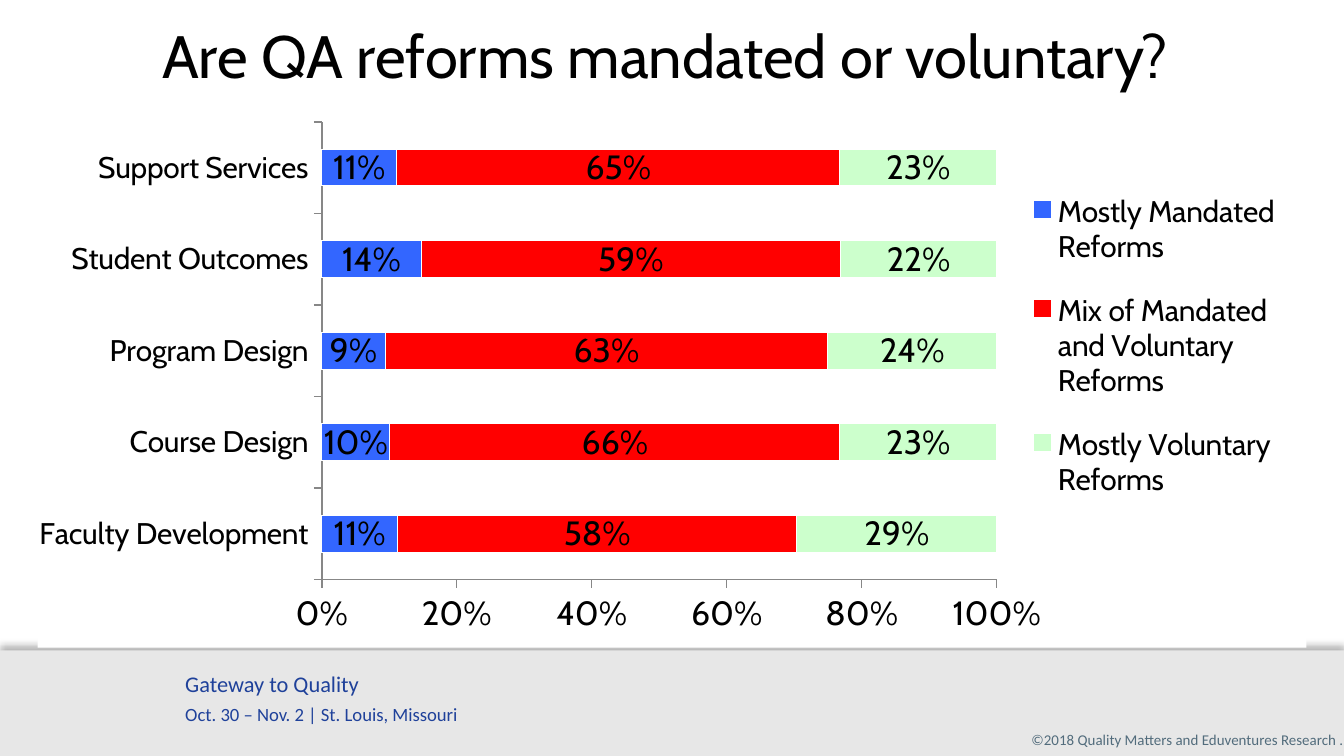
import pptx
import pptx.util
import pptx.chart.data
import pptx.dml.color
import pptx.enum.chart
import pptx.enum.shapes
import pptx.enum.text
import pptx.oxml
import pptx.oxml.ns

# Content
TITLE = "Are QA reforms mandated or voluntary?"
EVENT = [("Gateway to Quality", 12), ("Oct. 30 – Nov. 2 | St. Louis, Missouri", 10)]
COPYRIGHT = [("©2018 Quality Matters and Eduventures Research .", 8)]
AREAS = ["Faculty Development", "Course Design", "Program Design",
         "Student Outcomes", "Support Services"]
REFORMS = [
    ("Mostly Mandated Reforms", "3366FF", [0.11, 0.10, 0.09, 0.14, 0.11]),
    ("Mix of Mandated and Voluntary Reforms", "FF0000", [0.58, 0.66, 0.63, 0.59, 0.65]),
    ("Mostly Voluntary Reforms", "CCFFCC", [0.29, 0.23, 0.24, 0.22, 0.23]),
]
WIDTH = 10
HEIGHT = WIDTH * 9 / 16
FOOTER_TOP = 4.84
PLOT_SHARES = (0.224, 0.041, 0.532, 0.835)
LEGEND_SHARES = (0.77, 0.12, 0.22, 0.66)
ALIGN = pptx.enum.text.PP_ALIGN
NAMESPACES = pptx.oxml.ns.nsdecls("a", "c")


def color(value):
    return pptx.dml.color.RGBColor.from_string(value)


def inches(*lengths):
    return [pptx.util.Inches(length) for length in lengths]


def set_font(font, name, size, value):
    font.name = name
    font.size = pptx.util.Pt(size)
    font.color.rgb = color(value)


def add_text(page, area, lines, value, align, space=0):
    box = page.shapes.add_textbox(*inches(*area))
    frame = box.text_frame
    frame.word_wrap = True
    for index, (words, size) in enumerate(lines):
        para = frame.add_paragraph() if index else frame.paragraphs[0]
        para.text = words
        para.alignment = align
        para.space_before = pptx.util.Pt(space if index else 0)
        set_font(para.font, "Calibri", size, value)
    return frame


def manual_layout(shares, inner=False):
    target = '<c:layoutTarget val="inner"/>' if inner else ""
    modes = "".join(f'<c:{axis}Mode val="edge"/>' for axis in "xy")
    places = "".join(f'<c:{key} val="{share}"/>' for key, share in zip("xywh", shares))
    return pptx.oxml.parse_xml(f"<c:layout {NAMESPACES}><c:manualLayout>{target}{modes}"
                               f"{places}</c:manualLayout></c:layout>")


def replace_layout(element, layout, after=None):
    for old in element.findall(pptx.oxml.ns.qn("c:layout")):
        element.remove(old)
    if after is None:
        element.insert(0, layout)
    else:
        element.find(pptx.oxml.ns.qn(after)).addnext(layout)


deck = pptx.Presentation()
deck.slide_width, deck.slide_height = inches(WIDTH, HEIGHT)
page = deck.slides.add_slide(deck.slide_layouts[5])

# Footer band with a soft shadow above it
band = page.shapes.add_shape(pptx.enum.shapes.MSO_SHAPE.RECTANGLE,
                             *inches(0, FOOTER_TOP, WIDTH, HEIGHT - FOOTER_TOP))
band.fill.solid()
band.fill.fore_color.rgb = color("E7E7E7")
band.line.fill.background()
band.shadow.inherit = False
effects = band._element.spPr.find(pptx.oxml.ns.qn("a:effectLst"))
effects.append(pptx.oxml.parse_xml(
    f'<a:outerShdw {NAMESPACES} blurRad="{pptx.util.Pt(4)}" dist="{pptx.util.Pt(3)}" '
    'dir="16200000" rotWithShape="0"><a:srgbClr val="000000"><a:alpha val="30000"/>'
    '</a:srgbClr></a:outerShdw>'))
add_text(page, (1.28, 4.94, 6.39, 0.51), EVENT, "1F419A", ALIGN.LEFT, space=3)
add_text(page, (7.47, 5.39, 2.53, 0.24), COPYRIGHT, "526C7C", ALIGN.RIGHT).margin_right = 0

# Title
title = page.shapes.title
title.left, title.top, title.width, title.height = inches(0.28, 0.09, 9.34, 0.64)
title.text_frame.text = TITLE
title_para = title.text_frame.paragraphs[0]
title_para.alignment = ALIGN.CENTER
set_font(title_para.font, "Cabin", 32, "000000")

# Stacked bar chart
data = pptx.chart.data.CategoryChartData(number_format="0%")
data.categories = AREAS
for name, _, values in REFORMS:
    data.add_series(name, values)
chart = page.shapes.add_chart(pptx.enum.chart.XL_CHART_TYPE.BAR_STACKED_100,
                              *inches(0.28, 0.74, 9.44, 4.08), data).chart
set_font(chart.font, "Cabin", 18, "000000")
chart.has_title = False
plot = chart.plots[0]
plot.gap_width, plot.overlap = 150, 100
plot.vary_by_categories = False
for series, (_, fill, _) in zip(plot.series, REFORMS):
    series.format.fill.solid()
    series.format.fill.fore_color.rgb = color(fill)
    series.format.line.color.rgb = color("FFFFFF")
    labels = series.data_labels
    labels.show_value = True
    labels.number_format = "0%"
    labels.number_format_is_linked = False
    set_font(labels.font, "Cabin", 18, "000000")

# Axes
for axis, size in ((chart.category_axis, 16), (chart.value_axis, 18)):
    axis.has_major_gridlines = False
    axis.major_tick_mark = pptx.enum.chart.XL_TICK_MARK.OUTSIDE
    axis.minor_tick_mark = pptx.enum.chart.XL_TICK_MARK.NONE
    axis.format.line.color.rgb = color("878787")
    set_font(axis.tick_labels.font, "Cabin", size, "000000")
chart.value_axis.minimum_scale, chart.value_axis.maximum_scale = 0, 1
chart.value_axis.major_unit = 0.2
chart.value_axis.tick_labels.number_format = "0%"
chart.value_axis.tick_labels.number_format_is_linked = False

# Legend, plot position and white chart background
chart.has_legend = True
chart.legend.position = pptx.enum.chart.XL_LEGEND_POSITION.RIGHT
chart.legend.include_in_layout = False
set_font(chart.legend.font, "Cabin", 16, "000000")
replace_layout(chart.legend._element, manual_layout(LEGEND_SHARES), "c:legendPos")
chart_part = chart._chartSpace.find(pptx.oxml.ns.qn("c:chart"))
replace_layout(chart_part.find(pptx.oxml.ns.qn("c:plotArea")),
               manual_layout(PLOT_SHARES, inner=True))
chart_part.addnext(pptx.oxml.parse_xml(
    f'<c:spPr {NAMESPACES}><a:solidFill><a:srgbClr val="FFFFFF"/></a:solidFill>'
    '<a:ln><a:noFill/></a:ln></c:spPr>'))

deck.save("out.pptx")
